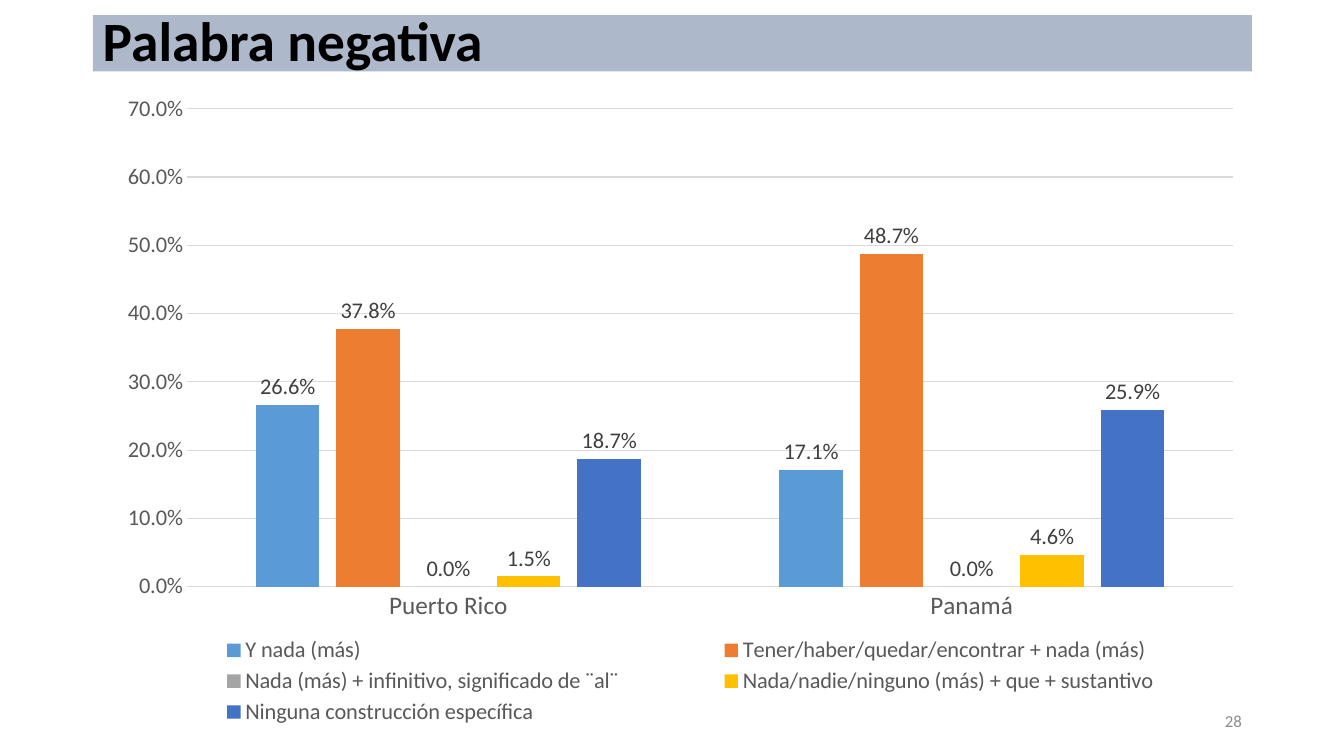
"""Build the slide that compares negative-word constructions in two countries."""
import pptx
import pptx.chart.data
import pptx.dml.color
import pptx.enum.chart
import pptx.enum.shapes
import pptx.enum.text
import pptx.oxml
import pptx.util
from pptx.util import Cm

TITLE = "Palabra negativa"
PAGE = "28"
COUNTRIES = ["Puerto Rico", "Panamá"]
CONSTRUCTIONS = [
    ("Y nada (más)", (0.266, 0.171), "5B9BD5"),
    ("Tener/haber/quedar/encontrar + nada (más)", (0.378, 0.487), "ED7D31"),
    ("Nada (más) + infinitivo, significado de ¨al¨", (0, 0), "A5A5A5"),
    ("Nada/nadie/ninguno (más) + que + sustantivo", (0.015, 0.046), "FFC000"),
    ("Ninguna construcción específica", (0.187, 0.259), "4472C4"),
]
PLOT_PERCENT = {"x": 8.1, "y": 3.05, "w": 90.3, "h": 73.3}
LEGEND_PERCENT = {"x": 3.1, "y": 83.5, "w": 96.9, "h": 14.7}
PERCENT = "0.0%"
THEME = {
    "font": "Calibri", "band": "ADB9CA", "title": "000000", "page": "8C8C8C",
    "axis": "595959", "label": "404040", "grid": "D9D9D9",
    "title_pt": 39.6, "country_pt": 18, "chart_pt": 16, "page_pt": 12, "line_pt": 0.75,
}
LEFT, WIDTH = Cm(2.34), Cm(29.21)


def rgb(code):
    return pptx.dml.color.RGBColor.from_string(code)


def style_font(font, size, color, bold=False):
    font.name = THEME["font"]
    font.size = pptx.util.Pt(size)
    font.bold = bold
    font.color.rgb = rgb(color)


def write(sp, text, *, size, color, bold=False, align="LEFT", spacing=1.0):
    tf = sp.text_frame
    tf.word_wrap = True
    tf.vertical_anchor = pptx.enum.text.MSO_ANCHOR.MIDDLE
    p = tf.paragraphs[0]
    p.alignment = getattr(pptx.enum.text.PP_ALIGN, align)
    p.line_spacing = spacing
    r = p.add_run()
    r.text = text
    style_font(r.font, size, color, bold)


def style_line(line):
    line.color.rgb = rgb(THEME["grid"])
    line.width = pptx.util.Pt(THEME["line_pt"])


def place(part, index, box, target=""):
    ns = "http://schemas.openxmlformats.org/drawingml/2006/chart"
    modes = "".join(f'<c:{k}Mode val="edge"/>' for k in "xy")
    sizes = "".join(f'<c:{k} val="{v / 100:.4f}"/>' for k, v in box.items())
    layout = pptx.oxml.parse_xml(
        f'<c:layout xmlns:c="{ns}"><c:manualLayout>{target}'
        f"{modes}{sizes}</c:manualLayout></c:layout>")
    for old in part.findall(f"{{{ns}}}layout"):
        part.remove(old)
    part.insert(index, layout)


def add_bars(s):
    data = pptx.chart.data.CategoryChartData(number_format=PERCENT)
    data.categories = COUNTRIES
    for name, values, _ in CONSTRUCTIONS:
        data.add_series(name, values)
    kind = pptx.enum.chart.XL_CHART_TYPE.COLUMN_CLUSTERED
    chart = s.shapes.add_chart(kind, LEFT, Cm(2.24), WIDTH, Cm(16.43), data).chart
    style_font(chart.font, THEME["chart_pt"], THEME["axis"])
    chart.has_title = False
    chart.has_legend = True
    chart.legend.position = pptx.enum.chart.XL_LEGEND_POSITION.BOTTOM
    chart.legend.include_in_layout = False
    style_font(chart.legend.font, THEME["chart_pt"], THEME["axis"])

    plot = chart.plots[0]
    plot.gap_width, plot.overlap = 219, -27
    plot.vary_by_categories = False
    for series, (_, _, color) in zip(plot.series, CONSTRUCTIONS):
        series.format.fill.solid()
        series.format.fill.fore_color.rgb = rgb(color)
        series.invert_if_negative = False
        labels = series.data_labels
        labels.show_value = True
        labels.position = pptx.enum.chart.XL_LABEL_POSITION.OUTSIDE_END
        labels.number_format, labels.number_format_is_linked = PERCENT, False
        style_font(labels.font, THEME["chart_pt"], THEME["label"])

    countries, shares = chart.category_axis, chart.value_axis
    for axis, size in ((countries, THEME["country_pt"]), (shares, THEME["chart_pt"])):
        axis.major_tick_mark = axis.minor_tick_mark = pptx.enum.chart.XL_TICK_MARK.NONE
        style_font(axis.tick_labels.font, size, THEME["axis"])
    style_line(countries.format.line)
    shares.format.line.fill.background()
    shares.minimum_scale, shares.maximum_scale, shares.major_unit = 0, 0.7, 0.1
    shares.tick_labels.number_format = PERCENT
    shares.tick_labels.number_format_is_linked = False
    style_line(shares.major_gridlines.format.line)
    place(plot._element.getparent(), 0, PLOT_PERCENT, '<c:layoutTarget val="inner"/>')
    place(chart.legend._element, 1, LEGEND_PERCENT)


def main():
    prs = pptx.Presentation()
    prs.slide_width, prs.slide_height = Cm(33.87), Cm(19.05)
    s = prs.slides.add_slide(prs.slide_layouts[6])
    rect = pptx.enum.shapes.MSO_SHAPE.RECTANGLE
    band = s.shapes.add_shape(rect, LEFT, Cm(0.38), WIDTH, Cm(1.42))
    band.shadow.inherit = False
    band.fill.solid()
    band.fill.fore_color.rgb = rgb(THEME["band"])
    band.line.fill.background()
    write(band, TITLE, size=THEME["title_pt"], color=THEME["title"], bold=True, spacing=0.9)
    add_bars(s)
    page_width = Cm(7.62)
    page = s.shapes.add_textbox(LEFT + WIDTH - page_width, Cm(17.65), page_width, Cm(1.02))
    write(page, PAGE, size=THEME["page_pt"], color=THEME["page"], align="RIGHT")
    prs.save("out.pptx")


if __name__ == "__main__":
    main()
